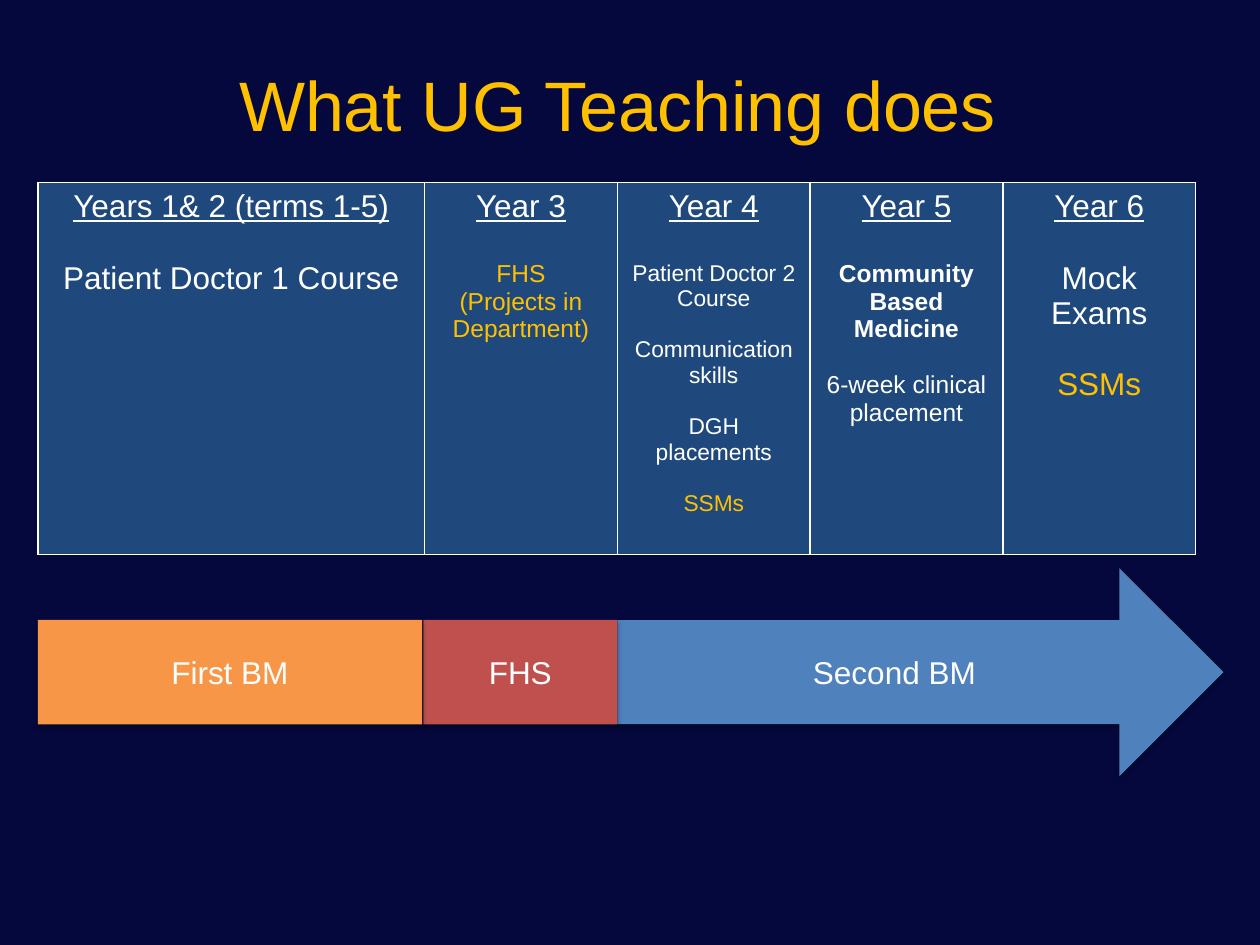
"""Build the slide on what undergraduate teaching does in each year."""
from lxml.etree import SubElement
from pptx import Presentation
from pptx.dml.color import RGBColor
from pptx.enum.shapes import MSO_SHAPE
from pptx.enum.text import MSO_ANCHOR, PP_ALIGN
from pptx.oxml.ns import qn
from pptx.util import Inches, Pt

COLORS = {
    "navy": "05083D", "gold": "FFC000", "white": "FFFFFF", "cell": "1F497D",
    "blue": "4F81BD", "red": "C0504D", "orange": "F79646", "shadow": "000000",
}


def write(p, text, size, color="white", underline=False, bold=False):
    p.alignment = PP_ALIGN.CENTER
    for i, line in enumerate(text.split("\n")):
        if i:
            p.add_line_break()
        r = p.add_run()
        r.text = line
        r.font.name = "Arial"
        r.font.size = Pt(size)
        r.font.underline = underline
        r.font.bold = bold
        r.font.color.rgb = RGBColor.from_string(COLORS[color])


def add_border(cell):
    for side in ("lnL", "lnR", "lnT", "lnB"):
        ln = SubElement(cell._tc.get_or_add_tcPr(), qn(f"a:{side}"), w=str(Pt(1)))
        fill = SubElement(ln, qn("a:solidFill"))
        SubElement(fill, qn("a:srgbClr"), val=COLORS["white"])


prs = Presentation()
prs.slide_width, prs.slide_height = Inches(10), Inches(7.5)
s = prs.slides.add_slide(prs.slide_layouts[6])
s.background.fill.solid()
s.background.fill.fore_color.rgb = RGBColor.from_string(COLORS["navy"])

tf = s.shapes.add_textbox(Inches(0.4), Inches(0.2), Inches(9), Inches(1.25)).text_frame
tf.word_wrap = True
tf.vertical_anchor = MSO_ANCHOR.MIDDLE
write(tf.paragraphs[0], "What UG Teaching does", 40, "gold")

years = [
    ("Years 1& 2 (terms 1-5)", 3.07, 18, [("Patient Doctor 1 Course", "white", False)]),
    ("Year 3", 1.53, 14, [("FHS\n(Projects in Department)", "gold", False)]),
    ("Year 4", 1.53, 13, [
        ("Patient Doctor 2 Course", "white", False),
        ("Communication skills", "white", False),
        ("DGH placements", "white", False),
        ("SSMs", "gold", False),
    ]),
    ("Year 5", 1.53, 14, [
        ("Community Based Medicine", "white", True),
        ("6-week clinical placement", "white", False),
    ]),
    ("Year 6", 1.53, 18, [("Mock Exams", "white", False), ("SSMs", "gold", False)]),
]
table = s.shapes.add_table(
    1, len(years), Inches(0.3), Inches(1.45), Inches(9.19), Inches(2.95)
).table
for col, (heading, width, size, items) in enumerate(years):
    table.columns[col].width = Inches(width)
    cell = table.cell(0, col)
    add_border(cell)
    cell.fill.solid()
    cell.fill.fore_color.rgb = RGBColor.from_string(COLORS["cell"])
    tf = cell.text_frame
    write(tf.paragraphs[0], heading, 18, underline=True)
    gap = 18
    for text, color, bold in items:
        p = tf.add_paragraph()
        p.space_before = Pt(round(gap * 1.15, 1))
        write(p, text, size, color, bold=bold)
        gap = size

stages = [
    ("Second BM", MSO_SHAPE.RIGHT_ARROW, "blue", 4.9, 4.51, 4.81, 1.65),
    ("FHS", MSO_SHAPE.RECTANGLE, "red", 3.36, 4.92, 1.54, 0.83),
    ("First BM", MSO_SHAPE.RECTANGLE, "orange", 0.3, 4.92, 3.05, 0.83),
]
for text, kind, color, *box in stages:
    sp = s.shapes.add_shape(kind, *map(Inches, box))
    sp.fill.solid()
    sp.fill.fore_color.rgb = RGBColor.from_string(COLORS[color])
    sp.line.fill.background()
    sp.shadow.inherit = False
    shadow = SubElement(
        sp._element.spPr.find(qn("a:effectLst")), qn("a:outerShdw"),
        blurRad=str(Pt(3.1)), dist=str(Pt(1.8)), dir="5400000", rotWithShape="0",
    )
    tint = SubElement(shadow, qn("a:srgbClr"), val=COLORS["shadow"])
    SubElement(tint, qn("a:alpha"), val="35000")
    sp.text_frame.vertical_anchor = MSO_ANCHOR.MIDDLE
    write(sp.text_frame.paragraphs[0], text, 18)

prs.save("out.pptx")
